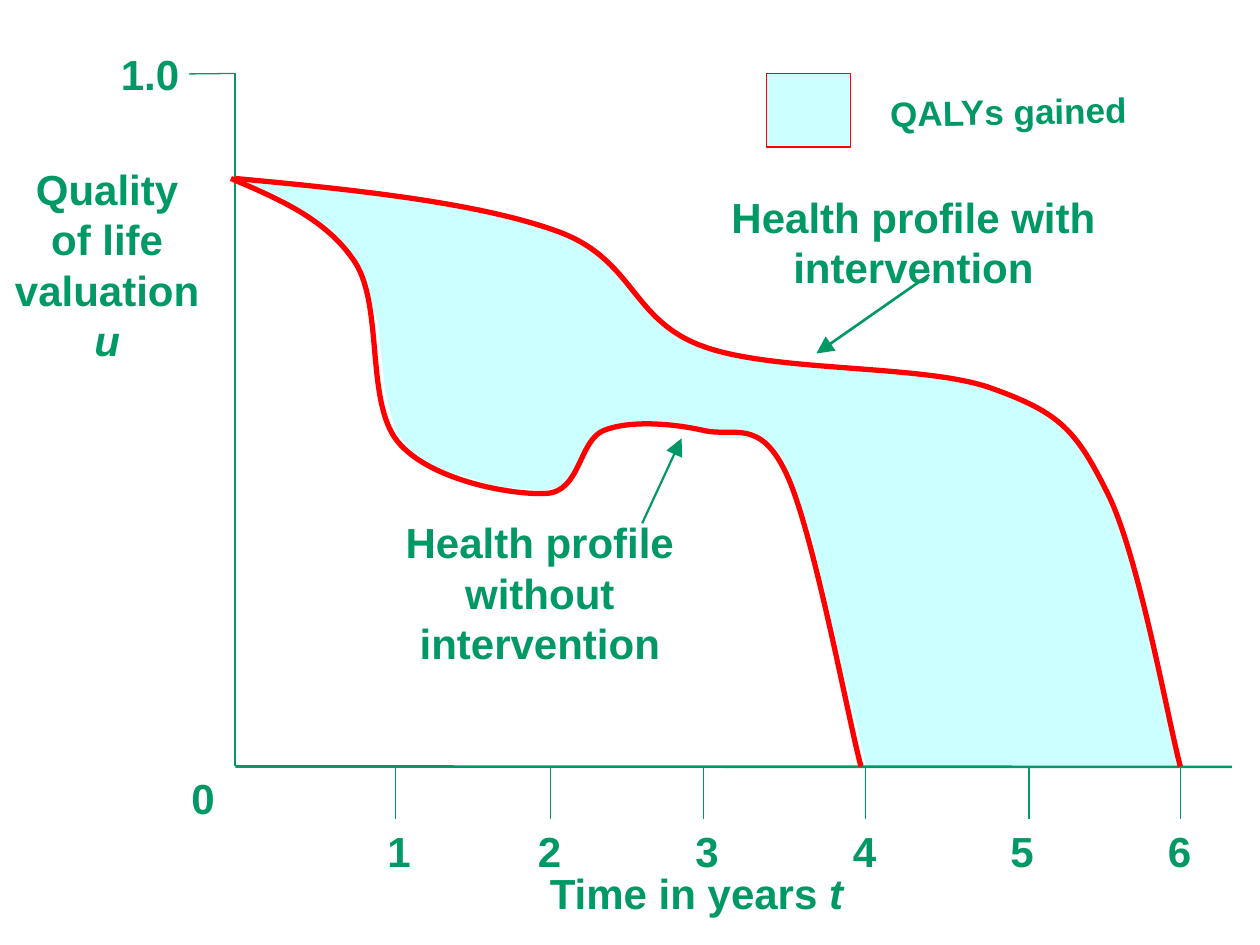
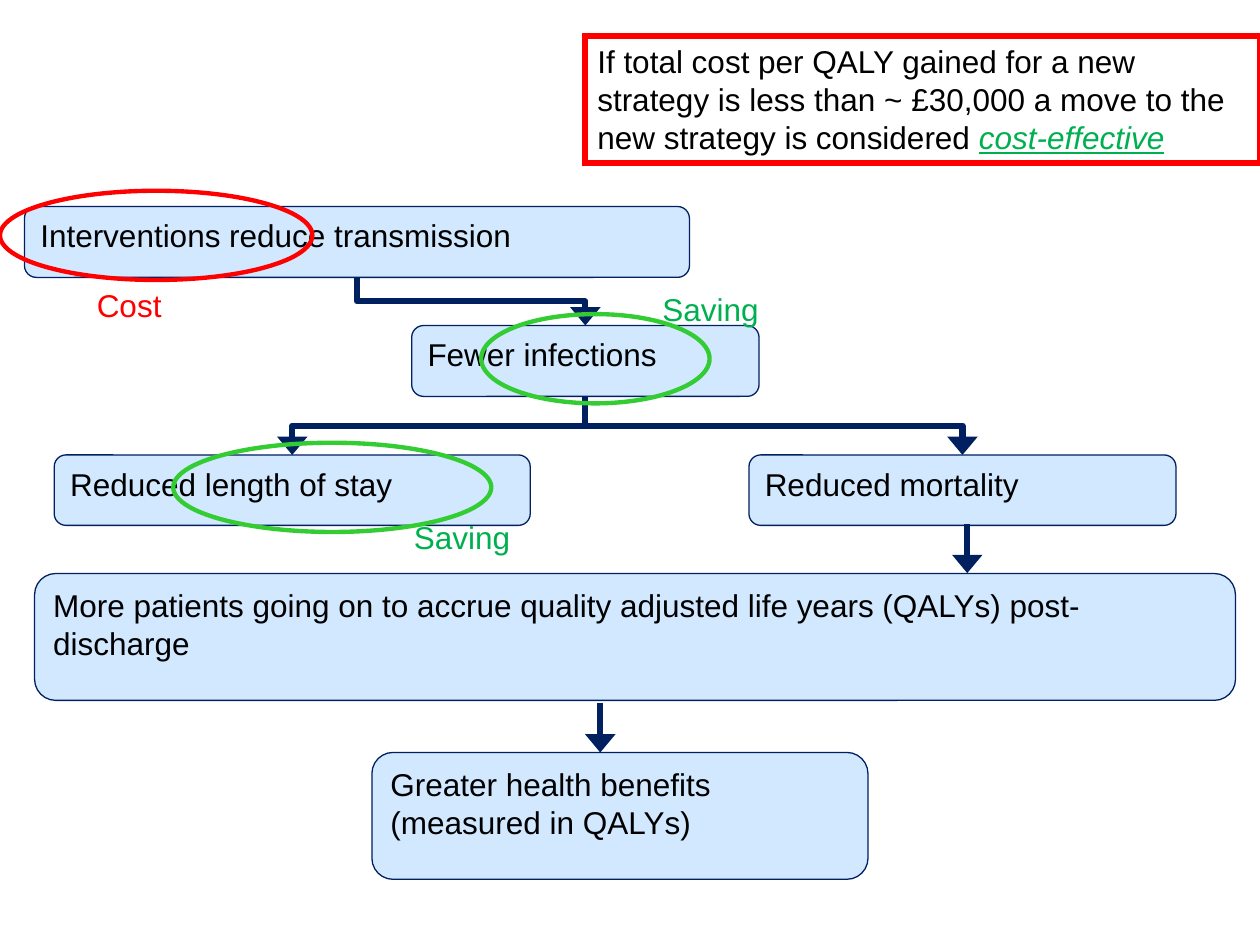
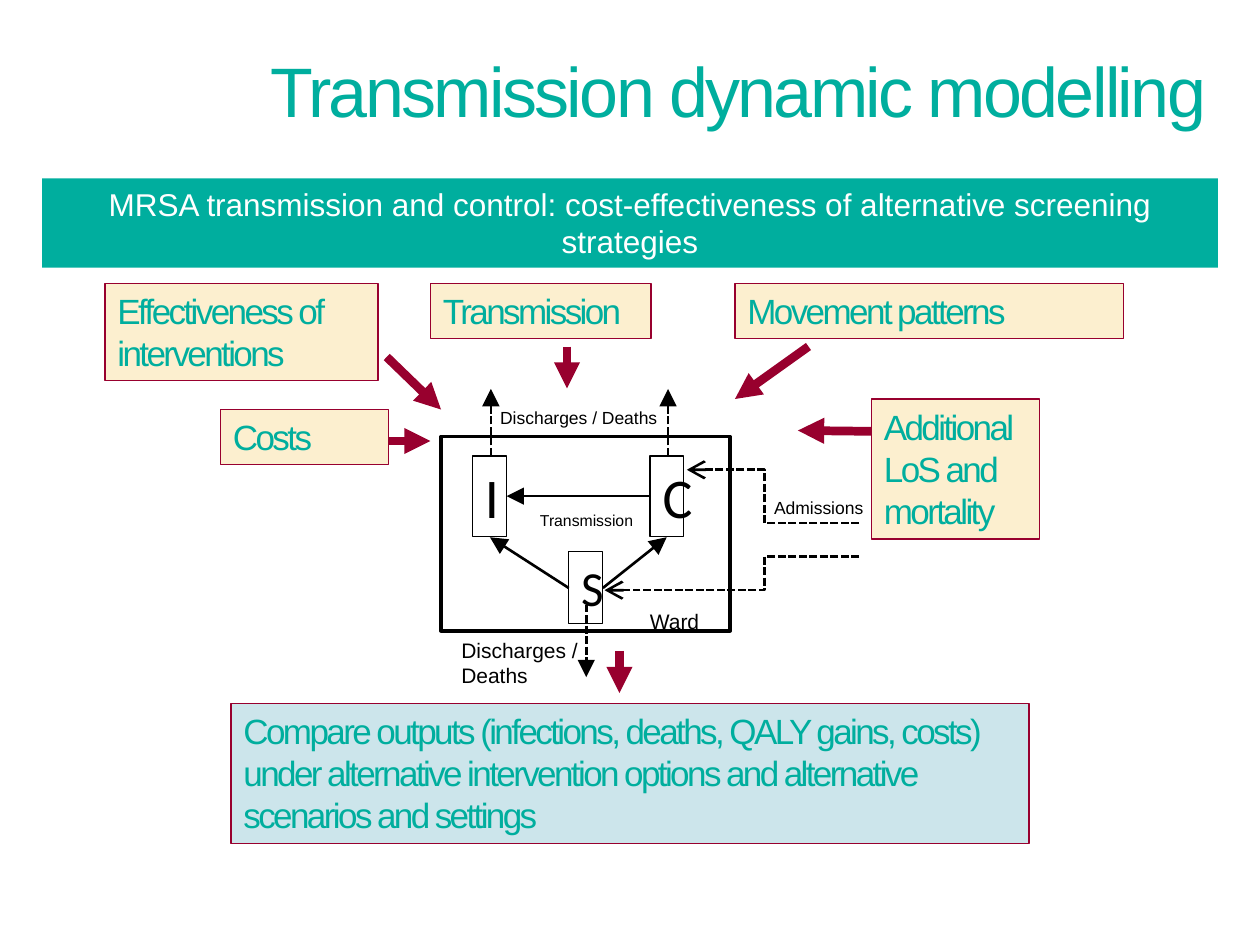
import lxml.etree
import pptx
import pptx.dml.color
import pptx.enum.dml
import pptx.enum.shapes
import pptx.enum.text
import pptx.oxml.ns
import pptx.util

Pt = pptx.util.Pt
RGB = pptx.dml.color.RGBColor
qn = pptx.oxml.ns.qn
KIND = pptx.enum.shapes.MSO_SHAPE
BEND = pptx.enum.shapes.MSO_CONNECTOR.ELBOW
PLAIN = pptx.enum.shapes.MSO_CONNECTOR.STRAIGHT
DASH = pptx.enum.dml.MSO_LINE.SQUARE_DOT
MID = pptx.enum.text.MSO_ANCHOR.MIDDLE
TOP = pptx.enum.text.MSO_ANCHOR.TOP
LEFT = pptx.enum.text.PP_ALIGN.LEFT
CENTER = pptx.enum.text.PP_ALIGN.CENTER

# Colours
BLACK = RGB(0x00, 0x00, 0x00)
WHITE = RGB(0xFF, 0xFF, 0xFF)
RED = RGB(0xFF, 0x00, 0x00)
JADE = RGB(0x00, 0x99, 0x66)
AQUA = RGB(0xCC, 0xFF, 0xFF)
NAVY = RGB(0x00, 0x20, 0x60)
SKY = RGB(0xD1, 0xE8, 0xFF)
GREEN = RGB(0x00, 0xB0, 0x50)
LIME = RGB(0x33, 0xCC, 0x33)
TEAL = RGB(0x00, 0xAE, 0x9E)
WINE = RGB(0x98, 0x00, 0x2E)
CREAM = RGB(0xFC, 0xEF, 0xCF)
MIST = RGB(0xCC, 0xE5, 0xEB)

# Arrowheads: type, width, length
HEAD = ("triangle", "med", "med")
WIDE = ("triangle", "lg", "med")
LARGE = ("triangle", "lg", "lg")
OPEN = ("arrow", "lg", "lg")


def write(page, text, spot, kind=None, fill=None, line=None, weight=0.75, size=18,
          color=BLACK, bold=False, font="Arial", align=LEFT, anchor=TOP, wrap=True,
          tight=0):
    """Add a box; newlines part paragraphs and *stars* mark italics."""
    spot = [Pt(v) for v in spot]
    if kind == "title":
        shape = page.shapes.title
        shape.left, shape.top, shape.width, shape.height = spot
    elif kind is None:
        shape = page.shapes.add_textbox(*spot)
    else:
        shape = page.shapes.add_shape(kind, *spot)
        shape.shadow.inherit = False
    if fill is None:
        shape.fill.background()
    else:
        shape.fill.solid()
        shape.fill.fore_color.rgb = fill
    if line is None:
        shape.line.fill.background()
    else:
        shape.line.color.rgb = line
        shape.line.width = Pt(weight)
    if not text:
        return shape
    frame = shape.text_frame
    frame.auto_size = pptx.enum.text.MSO_AUTO_SIZE.NONE
    frame.word_wrap = wrap
    frame.vertical_anchor = anchor
    for row, words in enumerate(text.split("\n")):
        para = frame.add_paragraph() if row else frame.paragraphs[0]
        para.alignment = align
        for turn, part in enumerate(words.split("*")):
            if not part:
                continue
            run = para.add_run()
            run.text = part
            run.font.name = font
            run.font.size = Pt(size)
            run.font.bold = bold
            run.font.italic = turn % 2 == 1
            run.font.color.rgb = color
            if tight:
                run.font._element.set("spc", str(tight))
    return shape


def link(page, ends, color, weight, tip=None, dash=None, kind=PLAIN, bend=None):
    """Add a line or arrow; bend is the elbow's place in percent."""
    wire = page.shapes.add_connector(kind, *[Pt(v) for v in ends])
    wire.line.color.rgb = color
    wire.line.width = Pt(weight)
    if dash:
        wire.line.dash_style = dash
    props = wire.element.spPr
    if tip:
        lxml.etree.SubElement(props.find(qn("a:ln")), qn("a:tailEnd"),
                              type=tip[0], w=tip[1], len=tip[2])
    if bend:
        lxml.etree.SubElement(props.find(".//" + qn("a:avLst")), qn("a:gd"),
                              name="adj1", fmla=f"val {round(bend * 1000)}")
    lxml.etree.SubElement(props, qn("a:effectLst"))
    return wire


deck = pptx.Presentation()
deck.slide_width, deck.slide_height = Pt(720), Pt(540)
bare, titled = deck.slide_layouts[6], deck.slide_layouts[5]

# Slide 1: health profiles
page = deck.slides.add_slide(bare)
area = [
    (135, 102), (198, 109.5), (256.5, 117), (297, 126), (330, 138), (346.5, 147),
    (360, 162), (375, 180), (393, 195), (411, 201), (444, 207), (486, 211.5),
    (534, 216), (567, 220.5), (592.5, 234), (621, 256.5), (637.5, 291),
    (658.5, 358.5), (675, 438), (495, 438), (463.5, 304.5), (447, 261),
    (438, 250.5), (412.5, 250.5), (396, 243), (366, 243), (343.5, 246), (327, 276),
    (310.5, 280.5), (282, 277.5), (249, 267), (237, 259.5), (226.5, 247.5),
    (220.5, 226.5), (216, 184.5), (205.5, 153), (187.5, 129), (172.5, 120),
    (157.5, 111)]
# Each curve is a start point, then two handles and an end point per piece
without = [
    (132, 102), (160, 114), (187, 125.5), (203, 150), (219, 175), (209, 229.5),
    (227, 252), (245, 274.5), (292.5, 283), (312, 282), (332, 281), (330.5, 252),
    (345, 246), (360, 240), (384.5, 242), (402, 246), (419, 250), (434, 238.5),
    (449, 270), (464.5, 301.5), (484.5, 410), (492, 438)]
treated = [
    (134.5, 102), (204.5, 108.5), (273.5, 116), (318, 132), (363, 148), (360, 183),
    (402, 198), (443, 213), (529, 208), (567, 222), (606, 236), (615, 246),
    (633, 282), (651, 318), (667.5, 412), (674.5, 438)]

pen = page.shapes.build_freeform(Pt(area[0][0]), Pt(area[0][1]))
pen.add_line_segments([(Pt(x), Pt(y)) for x, y in area[1:]], close=True)
gain = pen.convert_to_shape()
gain.shadow.inherit = False
gain.fill.solid()
gain.fill.fore_color.rgb = AQUA
gain.line.fill.background()

link(page, (134.5, 42, 134.5, 438), JADE, 1)
link(page, (134.5, 438, 704, 438.25), JADE, 1.5)
link(page, (134.5, 42, 108, 42.25), JADE, 0.75)

for curve in (without, treated):
    pen = page.shapes.build_freeform(Pt(curve[0][0]), Pt(curve[0][1]))
    pen.add_line_segments([(Pt(x), Pt(y)) for x, y in curve[1:]], close=False)
    trace = pen.convert_to_shape()
    # Join every three straight pieces into one cubic piece
    legs = trace.element.findall(".//" + qn("a:lnTo"))
    for i in range(0, len(legs), 3):
        legs[i].tag = qn("a:cubicBezTo")
        for leg in legs[i + 1:i + 3]:
            legs[i].append(leg[0])
            leg.getparent().remove(leg)
    trace.shadow.inherit = False
    trace.fill.background()
    trace.line.color.rgb = RED
    trace.line.width = Pt(3)

# Ticks and labels
label = dict(size=24, color=JADE, bold=True, align=CENTER, anchor=MID)
marks = ((226, 228), (314.5, 314), (402, 404), (494.5, 494), (588, 584), (674.5, 674))
for year, (tick, mid) in enumerate(marks, 1):
    link(page, (tick, 438, tick, 468), JADE, 0.75)
    write(page, str(year), (mid - 14, 468, 28, 36), wrap=False, **label)
for text, spot in (("Time in years *t*", (307, 492, 182, 36)),
                   ("0", (102, 438, 28, 36)),
                   ("1.0", (62, 24, 47.5, 36))):
    write(page, text, spot, wrap=False, **label)
for text, spot in (
        ("Health profile with intervention", (352, 120, 340, 36)),
        ("Health profile\nwithout intervention", (203.5, 306, 210, 65)),
        ("Quality\nof life valuation\n*u*", (0, 90, 122.5, 122))):
    write(page, text, spot, **label)
link(page, (531, 157, 466.5, 202), JADE, 1.5, LARGE)
link(page, (367, 299, 389.5, 250.5), JADE, 1.25, LARGE)

# Key
write(page, "", (438, 42, 48, 42), KIND.RECTANGLE, AQUA, RED)
key = write(page, "QALYs gained", (498, 48, 156.5, 31), **{**label, "size": 20})
key.rotation = 359

# Slide 2: from interventions to benefits
page = deck.slides.add_slide(bare)
for text, spot, inset in (
        ("Interventions reduce transmission", (14, 118, 380, 40.5), 7.2),
        ("Fewer infections", (235.25, 186, 198.5, 40.5), 7.2),
        ("Reduced length of stay", (31, 260, 272, 40.25), 7.2),
        ("Reduced mortality", (428, 260, 244, 40.25), 7.2),
        ("More patients going on to accrue quality adjusted life years (QALYs) "
         "post-discharge", (19.75, 327.75, 686.25, 72.5), 18),
        ("Greater health benefits (measured in QALYs)", (212.5, 430, 283.5, 72.5), 7.2)):
    box = write(page, text, spot, KIND.ROUNDED_RECTANGLE, SKY, NAVY)
    box.text_frame.margin_right = Pt(inset)

# Elbow arrows that leave downwards are turned by a quarter
for x1, y1, x2, y2 in ((204, 158.5, 334.5, 186), (334.5, 226.5, 550, 260),
                       (334.5, 226.5, 167, 260)):
    side = 1 if x2 > x1 else -1
    midx, midy = (x1 + x2) / 2, (y1 + y2) / 2
    dx, dy = side * (y2 - y1) / 2, abs(x2 - x1) / 2
    wire = link(page, (midx + dx, midy - dy, midx - dx, midy + dy), NAVY, 3.5,
                WIDE, kind=BEND)
    wire.element.spPr.xfrm.set("rot", "16200000" if side > 0 else "5400000")
for x, y in ((552.75, 299.5), (343, 402)):
    link(page, (x, y, x, y + 28), NAVY, 3.5, WIDE)

# Rings and their notes
for text, color, spot, tone, ring in (
        ("Saving", GREEN, (371.5, 162, 108, 36.5), LIME, (275, 179.5, 130.5, 51)),
        ("Saving", GREEN, (229.5, 292.5, 96.5, 36.5), LIME, (99, 253, 181.75, 51)),
        ("Cost", RED, (48.25, 160, 113, 36), RED, (0, 109, 178.5, 51))):
    write(page, "", ring, KIND.OVAL, line=tone, weight=2.5)
    write(page, text, spot, color=color)

rule = write(page, "If total cost per QALY gained for a new strategy is less than "
             "~ £30,000 a move to the new strategy is considered *cost-effective*",
             (334.25, 20.5, 385.75, 72.75), KIND.RECTANGLE, WHITE, RED, 3.5)
lxml.etree.SubElement(rule.element.spPr.find(qn("a:ln")), qn("a:miter"), lim="800000")
word = rule.text_frame.paragraphs[0].runs[-1].font
word.color.rgb = GREEN
word.underline = True

# Slide 3: transmission model
page = deck.slides.add_slide(titled)
write(page, "MRSA transmission and control: cost-effectiveness of alternative "
      "screening strategies", (24, 102, 672, 51), KIND.RECTANGLE, TEAL,
      color=WHITE, align=CENTER)
head = write(page, "Transmission dynamic modelling", (154, 25.5, 536, 51), "title",
             size=40, color=TEAL, align=CENTER, anchor=MID, tight=-150).text_frame
head.margin_left = head.margin_right = head.margin_top = head.margin_bottom = 0

# Inputs and output
for text, spot, fill in (
        ("Effectiveness of interventions", (60, 162, 156, 55.5), CREAM),
        ("Transmission", (246, 162, 126, 31.5), CREAM),
        ("Movement patterns", (420, 162, 222, 31.5), CREAM),
        ("Costs", (126, 234, 96, 31.5), CREAM),
        ("Additional LoS and mortality", (498, 228, 96, 80), CREAM),
        ("Compare outputs (infections, deaths, QALY gains, costs) under alternative "
         "intervention options and alternative scenarios and settings",
         (132, 402, 456, 80), MIST)):
    write(page, text, spot, KIND.RECTANGLE, fill, WINE, size=20, color=TEAL, tight=-150)
for ends in ((221, 204, 252, 234), (222, 252, 246, 252), (324, 198, 324, 222),
             (462, 198, 420, 228), (498, 246.5, 456, 246), (354, 372, 354, 396)):
    link(page, ends, WINE, 5, HEAD)

# Ward model
ward = page.shapes.add_group_shape()
write(ward, "", (252, 249.5, 165.25, 111), KIND.RECTANGLE, line=BLACK, weight=2)
for text, spot, size in (("I", (270, 260.5, 19.5, 46), 32),
                         ("C", (371.5, 260.5, 19.25, 46), 32),
                         ("S", (325, 315.25, 19.25, 41), 28)):
    write(ward, text, spot, KIND.RECTANGLE, line=BLACK, size=size, font="Calibri",
          align=CENTER)
for ends, bend in (((491, 299, 392.5, 268.5), 54.9), ((491, 318, 345.5, 337.25), 37.1)):
    link(ward, ends, BLACK, 1.5, OPEN, DASH, BEND, bend)
for ends in ((325, 336, 280, 307), (371.5, 283.5, 289.5, 283.5), (344.5, 336, 381, 307)):
    link(ward, ends, BLACK, 1.5, LARGE)
for ends in ((335, 345.5, 335, 387), (381.75, 260.5, 381.75, 222.25),
             (280.5, 260.5, 280.5, 222.25)):
    link(ward, ends, BLACK, 1.5, LARGE, DASH)
for text, spot, size in (("Ward", (364.25, 344, 54, 21.5), 12),
                         ("Admissions", (435.25, 280.5, 67.5, 31.5), 10),
                         ("Discharges / Deaths", (278.75, 229, 119.5, 19.5), 10),
                         ("Transmission", (301.5, 288.5, 72.5, 18), 9),
                         ("Discharges / Deaths", (256.5, 360.5, 98.5, 36), 12)):
    write(ward, text, spot, size=size)

deck.save("out.pptx")
